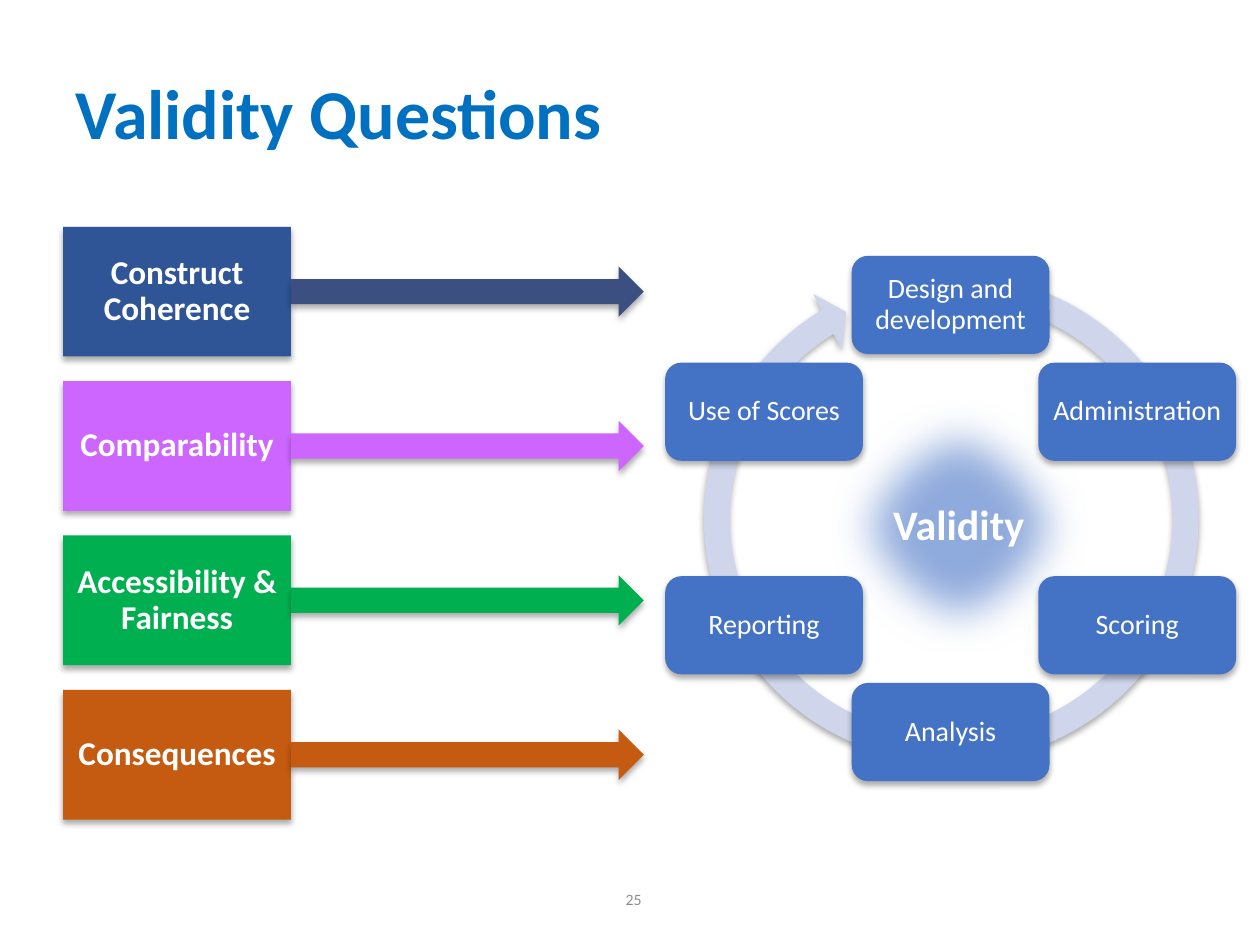
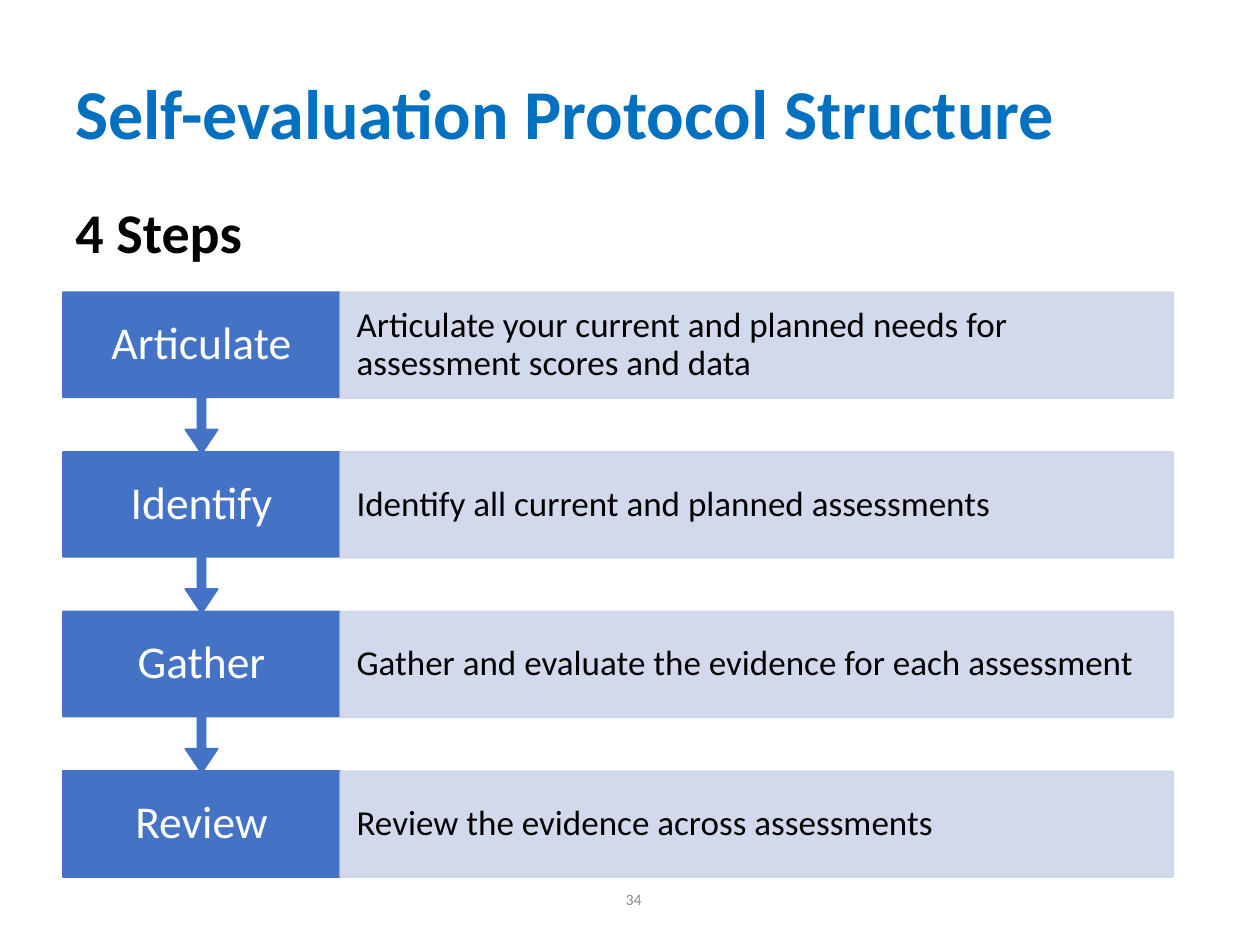
"""Build two slides on assessment validity and its self-evaluation protocol."""
import dataclasses
import math
import typing

import pptx
import pptx.dml.color
import pptx.enum.shapes
import pptx.enum.text
import pptx.oxml
import pptx.oxml.ns
import pptx.util

Preset = pptx.enum.shapes.MSO_SHAPE
Align = pptx.enum.text.PP_ALIGN
Anchor = pptx.enum.text.MSO_ANCHOR
SLIDE_WIDTH = pptx.util.Inches(10)
SLIDE_HEIGHT = pptx.util.Inches(7.5)
GRID_COLUMNS = 100
GRID_ROWS = 75


@dataclasses.dataclass(frozen=True)
class Theme:
    font: str = "Calibri"
    title_color: str = "0070C0"
    number_color: str = "8C8C8C"
    dark: str = "000000"
    light: str = "FFFFFF"
    accent: str = "4472C4"
    pale: str = "CFD5EA"
    glow: str = "8FAADC"
    title_size: float = 40
    heading_size: float = 32
    step_size: float = 26
    hub_size: float = 24
    detail_size: float = 20
    question_size: float = 19
    stage_size: float = 16
    number_size: float = 9
    line_spacing: float = 0.9


THEME = Theme()


class Box(typing.NamedTuple):
    column: float
    row: float
    columns: float
    rows: float


class Question(typing.NamedTuple):
    label: str
    box_color: str
    arrow_color: str


class Step(typing.NamedTuple):
    label: str
    detail: str


@dataclasses.dataclass(frozen=True)
class TextStyle:
    size: float
    color: str = THEME.light
    bold: bool = False
    align: Align = Align.CENTER
    side_inset: float = 0.08
    wrap: bool = True


@dataclasses.dataclass(frozen=True)
class ShapeStyle:
    preset: Preset
    fill: str
    line: typing.Optional[str] = None
    opacity: int = 100
    effect: str = ""
    adjustments: tuple[float, ...] = ()


SHADOW = (
    '<a:outerShdw {} blurRad="44450" dist="27940" dir="5400000" algn="ctr" rotWithShape="0">'
    '<a:srgbClr val="000000"><a:alpha val="32000"/></a:srgbClr></a:outerShdw>'
)
SOFT_EDGE = '<a:softEdge {} rad="317500"/>'

TITLE_TEXT = TextStyle(THEME.title_size, THEME.title_color, True, Align.LEFT, 0.1)
HEADING_TEXT = TextStyle(THEME.heading_size, THEME.dark, True, Align.LEFT, 0.1, False)
NUMBER_TEXT = TextStyle(THEME.number_size, THEME.number_color, align=Align.RIGHT, side_inset=0.1)
HUB_TEXT = TextStyle(THEME.hub_size, bold=True, side_inset=0)
STAGE_TEXT = TextStyle(THEME.stage_size, side_inset=0.05)
QUESTION_TEXT = TextStyle(THEME.question_size, bold=True)
STEP_TEXT = TextStyle(THEME.step_size, side_inset=0.16)
DETAIL_TEXT = TextStyle(THEME.detail_size, THEME.dark, align=Align.LEFT, side_inset=0.13)

HUB = ShapeStyle(Preset.OVAL, THEME.glow, effect=SOFT_EDGE)
CYCLE_ARROW = ShapeStyle(
    Preset.CIRCULAR_ARROW, THEME.pale, effect=SHADOW,
    adjustments=(0.05, 3.13, 142.67, 171.04, 0.06),
)
STAGE = ShapeStyle(Preset.ROUNDED_RECTANGLE, THEME.accent, effect=SHADOW)
STEP = ShapeStyle(
    Preset.DOWN_ARROW_CALLOUT, THEME.accent, THEME.accent, adjustments=(0.05, 0.1, 0.15, 0.65)
)
LAST_STEP = ShapeStyle(Preset.RECTANGLE, THEME.accent, THEME.accent)
DETAIL = ShapeStyle(Preset.RECTANGLE, THEME.pale, THEME.pale, opacity=90)

TITLE_BOX = Box(5, 3, 90, 12.5)
NUMBER_BOX = Box(29.4, 69.5, 22.5, 4)

QUESTIONS = (
    Question("Construct Coherence", "2F5597", "3B4F81"),
    Question("Comparability", "CC66FF", "CC66FF"),
    Question("Accessibility & Fairness", "00B050", "00B050"),
    Question("Consequences", "C55A11", "C55A11"),
)
STAGES = (
    "Design and development", "Administration", "Scoring",
    "Analysis", "Reporting", "Use of Scores",
)
STEPS = (
    Step("Articulate", "Articulate your current and planned needs for assessment scores and data"),
    Step("Identify", "Identify all current and planned assessments"),
    Step("Gather", "Gather and evaluate the evidence for each assessment"),
    Step("Review", "Review the evidence across assessments"),
)


def rgb(color: str) -> pptx.dml.color.RGBColor:
    """Turn a hexadecimal string into a colour."""
    return pptx.dml.color.RGBColor.from_string(color)


def apply(target: typing.Any, formats: dict[str, typing.Any]) -> None:
    """Set every format value on the target."""
    for name, value in formats.items():
        setattr(target, name, value)


def position(box: Box) -> dict[str, int]:
    """Convert grid units to lengths on the slide."""
    column, row = SLIDE_WIDTH / GRID_COLUMNS, SLIDE_HEIGHT / GRID_ROWS
    return {
        "left": round(box.column * column),
        "top": round(box.row * row),
        "width": round(box.columns * column),
        "height": round(box.rows * row),
    }


def write_text(shape: typing.Any, text: str, style: TextStyle) -> None:
    """Fill the shape with one formatted paragraph."""
    frame = shape.text_frame
    frame.text = text
    inset = pptx.util.Inches(style.side_inset)
    apply(frame, {
        "auto_size": pptx.enum.text.MSO_AUTO_SIZE.NONE,
        "word_wrap": style.wrap,
        "vertical_anchor": Anchor.MIDDLE,
        "margin_left": inset,
        "margin_right": inset,
        "margin_top": 0,
        "margin_bottom": 0,
    })
    paragraph = frame.paragraphs[0]
    apply(paragraph, {"alignment": style.align, "line_spacing": THEME.line_spacing})
    apply(paragraph.font, {
        "name": THEME.font, "size": pptx.util.Pt(style.size), "bold": style.bold,
    })
    paragraph.font.color.rgb = rgb(style.color)


def add_text(slide: typing.Any, box: Box, text: str, style: TextStyle) -> None:
    """Add a text box on the grid."""
    write_text(slide.shapes.add_textbox(**position(box)), text, style)


def add_shape(
    slide: typing.Any, box: Box, style: ShapeStyle,
    text: str = "", text_style: typing.Optional[TextStyle] = None,
) -> None:
    """Add a preset shape on the grid with its fill, line, effect and text."""
    shape = slide.shapes.add_shape(style.preset, **position(box))
    for index, value in enumerate(style.adjustments):
        shape.adjustments[index] = value
    shape.fill.solid()
    shape.fill.fore_color.rgb = rgb(style.fill)
    if style.line:
        shape.line.color.rgb = rgb(style.line)
        shape.line.width = pptx.util.Pt(1)
    else:
        shape.line.fill.background()
    properties = shape.element.spPr
    if style.opacity < 100:
        for color in properties.iter(pptx.oxml.ns.qn("a:srgbClr")):
            alpha = f'<a:alpha {pptx.oxml.ns.nsdecls("a")} val="{style.opacity * 1000}"/>'
            color.append(pptx.oxml.parse_xml(alpha))
    shape.shadow.inherit = False
    if style.effect:
        effect = pptx.oxml.parse_xml(style.effect.format(pptx.oxml.ns.nsdecls("a")))
        properties.find(pptx.oxml.ns.qn("a:effectLst")).append(effect)
    if text_style:
        write_text(shape, text, text_style)


def add_titled_slide(presentation: typing.Any, title: str, number: str) -> typing.Any:
    """Add a title-only slide with its title and page number."""
    slide = presentation.slides.add_slide(presentation.slide_layouts.get_by_name("Title Only"))
    apply(slide.shapes.title, position(TITLE_BOX))
    write_text(slide.shapes.title, title, TITLE_TEXT)
    add_text(slide, NUMBER_BOX, number, NUMBER_TEXT)
    return slide


def add_cycle(slide: typing.Any) -> None:
    """Draw the assessment stages around the validity hub."""
    center_column, center_row = 75.45, 41.15
    radius_columns, radius_rows = 17.1, 16.95
    width, height = 15.7, 7.8
    add_shape(slide, Box(65.1, 30.9, 22, 21.8), HUB, "Validity", HUB_TEXT)
    add_shape(slide, Box(54.4, 20.3, 42.2, 41.7), CYCLE_ARROW)
    for index, stage in enumerate(STAGES):
        angle = math.tau * index / len(STAGES)
        column = center_column + radius_columns * math.sin(angle) - width / 2
        row = center_row - radius_rows * math.cos(angle) - height / 2
        add_shape(slide, Box(column, row, width, height), STAGE, stage, STAGE_TEXT)


def add_questions(slide: typing.Any) -> None:
    """Draw the four questions with arrows towards the cycle."""
    left, top, width, height, pitch = 5, 18, 18.1, 10.3, 12.25
    arrow_width, arrow_height = 28, 4
    for index, question in enumerate(QUESTIONS):
        row = top + index * pitch
        block = ShapeStyle(Preset.RECTANGLE, question.box_color, effect=SHADOW)
        arrow = ShapeStyle(Preset.RIGHT_ARROW, question.arrow_color, effect=SHADOW)
        arrow_row = row + (height - arrow_height) / 2
        add_shape(slide, Box(left, row, width, height), block, question.label, QUESTION_TEXT)
        add_shape(slide, Box(left + width, arrow_row, arrow_width, arrow_height), arrow)


def add_steps(slide: typing.Any) -> None:
    """Draw the protocol steps as a downward chain with details."""
    left, top, width, height, pitch = 5, 23.2, 22, 8.4, 12.67
    callout_height, detail_width = 12.8, 66.1
    for index, step in enumerate(STEPS):
        row = top + index * pitch
        is_last = index == len(STEPS) - 1
        style = LAST_STEP if is_last else STEP
        step_height = height if is_last else callout_height
        add_shape(slide, Box(left, row, width, step_height), style, step.label, STEP_TEXT)
        detail_box = Box(left + width, row, detail_width, height)
        add_shape(slide, detail_box, DETAIL, step.detail, DETAIL_TEXT)


def main() -> None:
    """Build and save the presentation."""
    presentation = pptx.Presentation()
    apply(presentation, {"slide_width": SLIDE_WIDTH, "slide_height": SLIDE_HEIGHT})

    questions_slide = add_titled_slide(presentation, "Validity Questions", "25")
    add_cycle(questions_slide)
    add_questions(questions_slide)

    steps_slide = add_titled_slide(presentation, "Self-evaluation Protocol Structure", "34")
    add_text(steps_slide, Box(5, 15.5, 15.4, 6.4), "4 Steps", HEADING_TEXT)
    add_steps(steps_slide)

    presentation.save("out.pptx")


if __name__ == "__main__":
    main()
